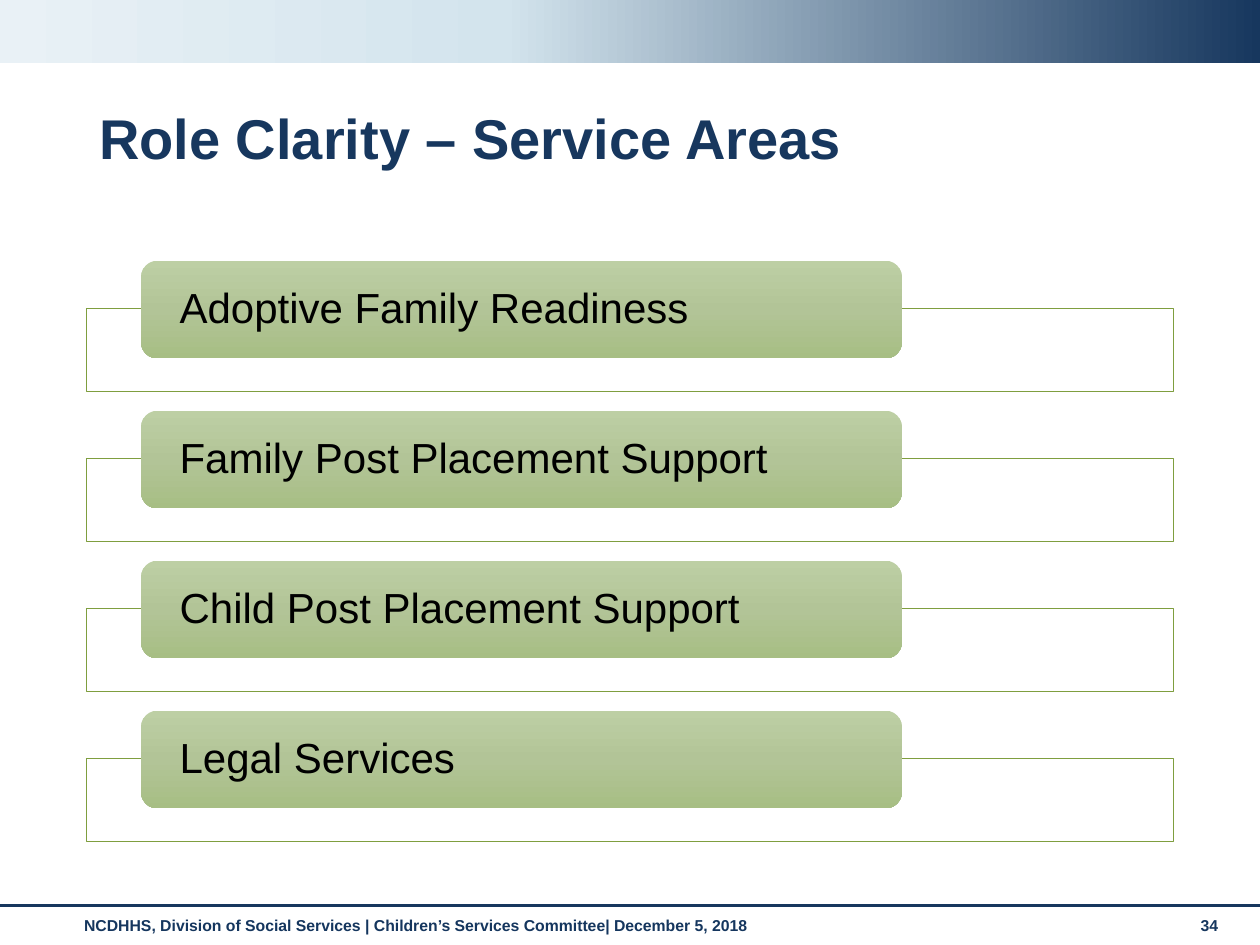
"""Build the Role Clarity slide listing four service areas."""
import dataclasses
import typing

import lxml.etree
import pptx
import pptx.dml.color
import pptx.enum.shapes
import pptx.enum.text
import pptx.oxml.ns
import pptx.util

Pt = pptx.util.Pt
RGBColor = pptx.dml.color.RGBColor
Anchor = pptx.enum.text.MSO_ANCHOR
Shapes = pptx.enum.shapes.MSO_SHAPE
qn = pptx.oxml.ns.qn


class Box(typing.NamedTuple):
    left: float
    top: float
    width: float
    height: float

    def lengths(self) -> list:
        return [Pt(value) for value in self]

    def lowered(self, distance: float) -> "Box":
        return self._replace(top=self.top + distance)


@dataclasses.dataclass(frozen=True)
class Gradient:
    stops: tuple
    angle: int


@dataclasses.dataclass(frozen=True)
class Theme:
    font: str = "Arial"
    navy: str = "17375E"
    footer: str = "15365E"
    black: str = "000000"
    white: str = "FFFFFF"
    outline: str = "7F9E3F"
    band: Gradient = Gradient(((0, "17375E"), (60, "D3E4ED"), (100, "E9F1F6")), 180)
    label: Gradient = Gradient(((0, "BDCFA4"), (50, "B2C497"), (100, "A7BE84")), 270)
    title_size: float = 32
    label_size: float = 24
    footer_size: float = 9


@dataclasses.dataclass(frozen=True)
class ServiceArea:
    name: str
    row: int


THEME = Theme()
ROW_PITCH = 85.7
FRAME = Box(49.5, 176.5, 621, 47.5)
LABEL = Box(80.6, 149, 434.8, 55.8)
TITLE = Box(49.5, 28.8, 621, 104.4)
BAND = Box(0, 0, 720, 36)
FOOTER = Box(41, 519.8, 629.3, 21)
PAGE_NUMBER = Box(679, 519.8, 31.7, 21.6)
FOOTER_RULE = 517.5
AREAS = [
    ServiceArea(name, row)
    for row, name in enumerate([
        "Adoptive Family Readiness",
        "Family Post Placement Support",
        "Child Post Placement Support",
        "Legal Services",
    ])
]


def write_text(shape, text: str, *, size: float, color: str, bold: bool = False,
               anchor=Anchor.TOP, side_inset: float = 7.2, end_inset: float = 3.6,
               line_spacing: float = 1.0) -> None:
    """Put one formatted, left-aligned paragraph into a shape."""
    frame = shape.text_frame
    frame.word_wrap = True
    frame.auto_size = pptx.enum.text.MSO_AUTO_SIZE.NONE
    frame.vertical_anchor = anchor
    frame.margin_left = frame.margin_right = Pt(side_inset)
    frame.margin_top = frame.margin_bottom = Pt(end_inset)
    paragraph = frame.paragraphs[0]
    paragraph.alignment = pptx.enum.text.PP_ALIGN.LEFT
    paragraph.line_spacing = line_spacing
    run = paragraph.add_run()
    run.text = text
    run.font.name = THEME.font
    run.font.size = Pt(size)
    run.font.bold = bold
    run.font.color.rgb = RGBColor.from_string(color)


def fill_gradient(shape, gradient: Gradient) -> None:
    """Fill a shape with a linear gradient of any number of stops."""
    shape.fill.gradient()
    shape.fill.gradient_angle = gradient.angle
    stop_list = next(shape.element.iter(qn("a:gsLst")))
    for stop in list(stop_list):
        stop_list.remove(stop)
    for position, color in gradient.stops:
        stop = lxml.etree.SubElement(stop_list, qn("a:gs"), pos=str(position * 1000))
        lxml.etree.SubElement(stop, qn("a:srgbClr"), val=color)


def add_panel(slide, kind, box: Box, fill: str | Gradient, outline: str | None = None):
    """Add a shadowless shape with a plain or gradient fill."""
    shape = slide.shapes.add_shape(kind, *box.lengths())
    shape.shadow.inherit = False
    if isinstance(fill, Gradient):
        fill_gradient(shape, fill)
    else:
        shape.fill.solid()
        shape.fill.fore_color.rgb = RGBColor.from_string(fill)
    if outline:
        shape.line.color.rgb = RGBColor.from_string(outline)
        shape.line.width = Pt(0.5)
    else:
        shape.line.fill.background()
    return shape


def add_title(slide, text: str) -> None:
    """Move the title placeholder into place and fill it."""
    title = slide.shapes.title
    title.left, title.top, title.width, title.height = TITLE.lengths()
    write_text(title, text, size=THEME.title_size, color=THEME.navy, bold=True,
               anchor=Anchor.MIDDLE, line_spacing=0.9)


def add_service_area(slide, area: ServiceArea) -> None:
    """Draw the outlined frame of one service area and its label."""
    drop = area.row * ROW_PITCH
    add_panel(slide, Shapes.RECTANGLE, FRAME.lowered(drop), THEME.white, THEME.outline)
    label = add_panel(slide, Shapes.ROUNDED_RECTANGLE, LABEL.lowered(drop), THEME.label)
    write_text(label, area.name, size=THEME.label_size, color=THEME.black,
               anchor=Anchor.MIDDLE, side_inset=19.3, end_inset=0, line_spacing=0.9)


def add_footer(slide, text: str, number: str) -> None:
    """Draw the footer rule, the footer text and the page number."""
    rule = slide.shapes.add_connector(
        pptx.enum.shapes.MSO_CONNECTOR.STRAIGHT,
        Pt(0), Pt(FOOTER_RULE), Pt(BAND.width), Pt(FOOTER_RULE))
    rule.line.color.rgb = RGBColor.from_string(THEME.navy)
    rule.line.width = Pt(1.75)
    lxml.etree.SubElement(rule.element.spPr, qn("a:effectLst"))
    for box, content in ((FOOTER, text), (PAGE_NUMBER, number)):
        textbox = slide.shapes.add_textbox(*box.lengths())
        write_text(textbox, content, size=THEME.footer_size, color=THEME.footer, bold=True)


def main() -> None:
    """Build and save the presentation."""
    presentation = pptx.Presentation()
    presentation.slide_width, presentation.slide_height = Pt(720), Pt(540)
    slide = presentation.slides.add_slide(presentation.slide_layouts[5])
    add_panel(slide, Shapes.RECTANGLE, BAND, THEME.band)
    add_footer(
        slide,
        "NCDHHS, Division of Social Services | Children’s Services Committee| December 5, 2018",
        "34")
    add_title(slide, "Role Clarity – Service Areas")
    for area in AREAS:
        add_service_area(slide, area)
    presentation.save("out.pptx")


if __name__ == "__main__":
    main()
